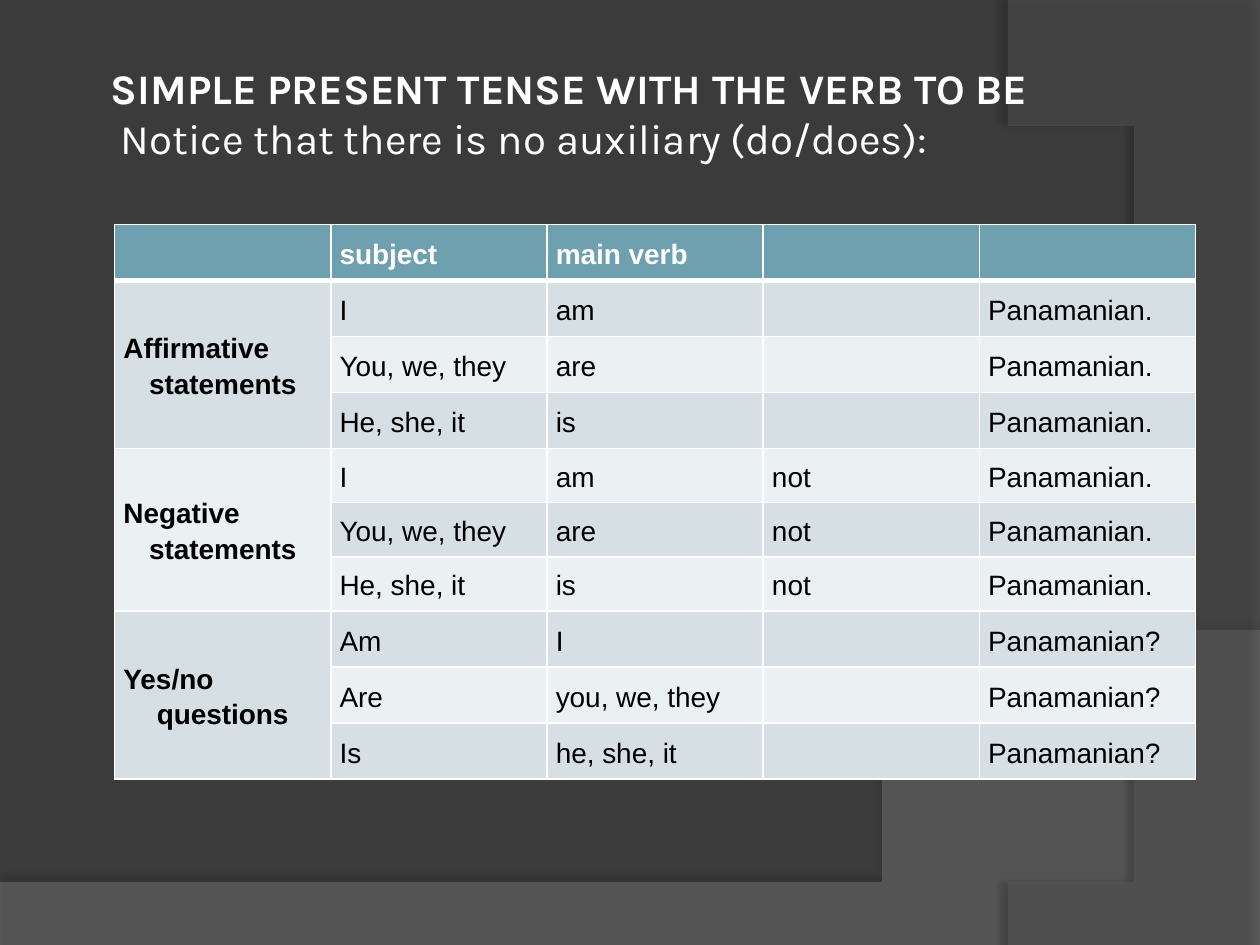
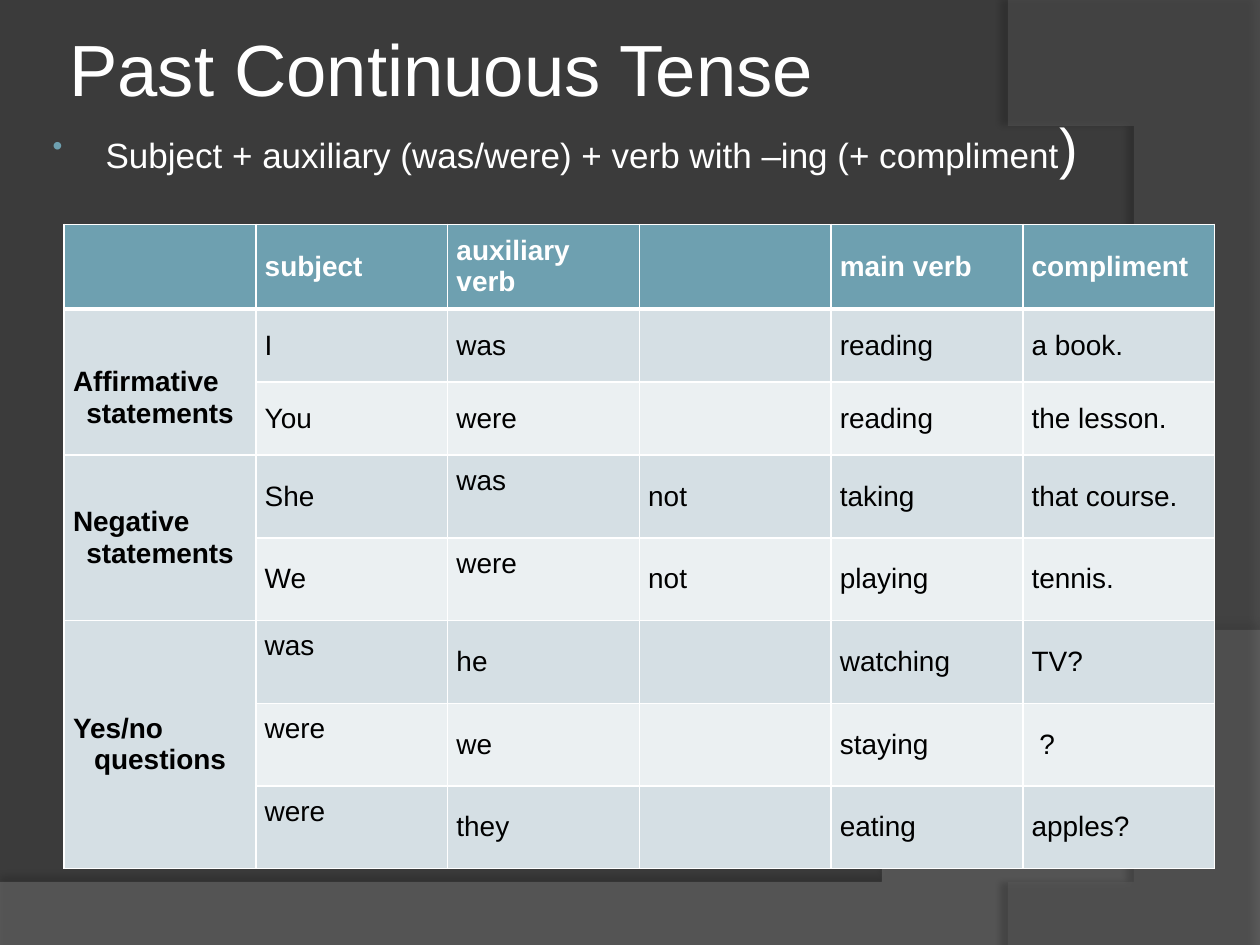
from dataclasses import dataclass
from typing import Any, NamedTuple

from lxml.etree import SubElement
from pptx import Presentation
from pptx.dml.color import RGBColor
from pptx.enum.text import MSO_ANCHOR, PP_ALIGN
from pptx.oxml.ns import qn
from pptx.util import Inches, Pt


# Theme: colours, fonts and type sizes shared by the slides
@dataclass(frozen=True)
class Theme:
    background: str = "3B3B3B"
    wave: str = "7F7F7F"
    arc: str = "5E5E5E"
    shadow: str = "000000"
    light_text: str = "FFFFFF"
    dark_text: str = "000000"
    accent: str = "6EA0B0"
    odd_row: str = "D5DFE4"
    even_row: str = "EBF0F2"
    border: str = "FFFFFF"
    body_font: str = "Arial"
    heading_font: str = "Karla"
    cell_size: float = 16
    formula_size: float = 20
    heading_size: float = 24
    bracket_size: float = 32
    title_size: float = 41.4


THEME = Theme()
Point = tuple[float, float]


class Band(NamedTuple):
    """A background outline: corners, then a Bezier curve back to the start."""
    corners: list[Point]
    curve: list[Point]
    color: str
    opacity: int
    shadow_opacity: int
    shadow_distance: float
    shadow_angle: int


class TextRun(NamedTuple):
    text: str
    size: float
    font: str = THEME.body_font
    color: str = THEME.light_text
    bold: bool = False


class Box(NamedTuple):
    left: float
    top: float
    width: float
    height: float

    def lengths(self) -> list[int]:
        return [Inches(value) for value in self]


class SentenceGroup(NamedTuple):
    label: str
    rows: list[list[str]]


@dataclass(frozen=True)
class TenseTable:
    box: Box
    header: list[str]
    groups: list[SentenceGroup]
    row_heights: list[float]
    line_spacing: float = 1.0
    raised: frozenset = frozenset()
    lowered: frozenset = frozenset()


BANDS = [
    Band([(0, 7.05), (0, 7.5), (10, 7.5), (10, 5.2)],
         [(10, 5.2), (5.59, 7.29), (3.91, 7.19), (0, 7.05)],
         THEME.wave, 45, 35, 3.5, 270),
    Band([(8, 0), (10, 0.02), (10, 7.5), (8.21, 7.5)],
         [(8.21, 7.5), (9.35, 6.19), (10.18, 3), (8, 0)],
         THEME.arc, 40, 45, 4, 180),
]

PRESENT_TABLE = TenseTable(
    box=Box(0.91, 1.78, 8.58, 4.3),
    header=["", "subject", "main verb", "", ""],
    groups=[
        SentenceGroup("Affirmative\nstatements", [
            ["I", "am", "", "Panamanian."],
            ["You, we, they", "are", "", "Panamanian."],
            ["He, she, it", "is", "", "Panamanian."]]),
        SentenceGroup("Negative\nstatements", [
            ["I", "am", "not", "Panamanian."],
            ["You, we, they", "are", "not", "Panamanian."],
            ["He, she, it", "is", "not", "Panamanian."]]),
        SentenceGroup("Yes/no\nquestions", [
            ["Am", "I", "", "Panamanian?"],
            ["Are", "you, we, they", "", "Panamanian?"],
            ["Is", "he, she, it", "", "Panamanian?"]]),
    ],
    row_heights=[0.43] * 10,
    line_spacing=1.15,
)

PAST_TABLE = TenseTable(
    box=Box(0.51, 1.78, 9.13, 5),
    header=["", "subject", "auxiliary verb", "", "main verb", "compliment"],
    groups=[
        SentenceGroup("Affirmative\nstatements", [
            ["I", "was", "", "reading", "a book."],
            ["You", "were", "", "reading", "the lesson."]]),
        SentenceGroup("Negative\nstatements", [
            ["She", "was", "not", "taking", "that course."],
            ["We", "were", "not", "playing", "tennis."]]),
        SentenceGroup("Yes/no\nquestions", [
            ["was", "he", "", "watching", "TV?"],
            ["were", "we", "", "staying", " ?"],
            ["were", "they", "", "eating", "apples?"]]),
    ],
    row_heights=[0.64] + [0.58] * 2 + [0.64] * 5,
    raised=frozenset({(3, 2), (4, 2), (5, 1), (6, 1), (7, 1)}),
    lowered=frozenset({(1, 0)}),
)


# Formatting helpers
def apply_format(target: Any, values: dict[str, Any]) -> None:
    for name, value in values.items():
        setattr(target, name, value)


def add_run(paragraph: Any, content: TextRun) -> None:
    run = paragraph.add_run()
    run.text = content.text
    apply_format(run.font, {"name": content.font, "size": Pt(content.size),
                            "bold": content.bold})
    run.font.color.rgb = RGBColor.from_string(content.color)


def add_color(parent: Any, color: str, opacity: int = 100) -> None:
    node = SubElement(parent, qn("a:srgbClr"), val=color)
    if opacity < 100:
        SubElement(node, qn("a:alpha"), val=str(opacity * 1000))


# Background bands
def curve_points(curve: list[Point], steps: int = 48) -> list[Point]:
    points = []
    for step in range(1, steps + 1):
        t = step / steps
        weights = ((1 - t) ** 3, 3 * t * (1 - t) ** 2, 3 * t ** 2 * (1 - t), t ** 3)
        points.append(tuple(sum(weight * point[axis] for weight, point in zip(weights, curve))
                            for axis in (0, 1)))
    return points


def draw_band(slide: Any, band: Band) -> None:
    start, *outline = band.corners + curve_points(band.curve)
    builder = slide.shapes.build_freeform(*start, scale=Inches(1))
    builder.add_line_segments(outline, close=True)
    shape = builder.convert_to_shape()
    shape.line.fill.background()
    shape.fill.solid()
    shape.fill.fore_color.rgb = RGBColor.from_string(band.color)
    properties = shape.fill._xPr
    color_node = properties.find(qn("a:solidFill")).find(qn("a:srgbClr"))
    SubElement(color_node, qn("a:alpha"), val=str(band.opacity * 1000))
    shape.shadow.inherit = False
    shadow = SubElement(properties.find(qn("a:effectLst")), qn("a:outerShdw"),
                        blurRad=str(Pt(4)), dist=str(Pt(band.shadow_distance)),
                        dir=str(band.shadow_angle * 60000), rotWithShape="0")
    add_color(shadow, THEME.shadow, band.shadow_opacity)


# Text boxes
def draw_text(slide: Any, box: Box, paragraphs: list[list[TextRun]],
              anchor: MSO_ANCHOR = MSO_ANCHOR.TOP, side_inset: float = 0.05) -> Any:
    frame = slide.shapes.add_textbox(*box.lengths()).text_frame
    apply_format(frame, {
        "word_wrap": True, "vertical_anchor": anchor,
        "margin_left": Inches(side_inset), "margin_right": Inches(side_inset),
        "margin_top": Inches(0.05), "margin_bottom": Inches(0.05)})
    for index, runs in enumerate(paragraphs):
        paragraph = frame.add_paragraph() if index else frame.paragraphs[0]
        for content in runs:
            add_run(paragraph, content)
    return frame


def add_bullet(paragraph: Any) -> None:
    paragraph.space_before = Pt(4)
    properties = paragraph._p.get_or_add_pPr()
    properties.set("marL", str(Inches(0.46)))
    properties.set("indent", str(Inches(-0.42)))
    add_color(SubElement(properties, qn("a:buClr")), THEME.accent)
    SubElement(properties, qn("a:buSzPct"), val="80000")
    SubElement(properties, qn("a:buFont"), typeface=THEME.body_font)
    SubElement(properties, qn("a:buChar"), char="•")


# Tense tables
def set_borders(cell: Any, row: int) -> None:
    properties = cell._tc.get_or_add_tcPr()
    thick_side = {0: "lnB", 1: "lnT"}.get(row)
    for side in ("lnL", "lnR", "lnT", "lnB"):
        width = Pt(3 if side == thick_side else 1)
        line = SubElement(properties, qn(f"a:{side}"), w=str(width))
        add_color(SubElement(line, qn("a:solidFill")), THEME.border)


def fill_cell(cell: Any, text: str, row: int, column: int, table: TenseTable) -> None:
    extra_line = 0.25
    position = (row, column)
    apply_format(cell, {
        "vertical_anchor": MSO_ANCHOR.MIDDLE,
        "margin_left": Inches(0.07), "margin_right": Inches(0.07),
        "margin_top": Inches(0.07 + extra_line * (position in table.lowered)),
        "margin_bottom": Inches(0.07 + extra_line * (position in table.raised))})
    if not cell.is_spanned:
        set_borders(cell, row)
    row_color = THEME.odd_row if row % 2 else THEME.even_row
    cell.fill.solid()
    cell.fill.fore_color.rgb = RGBColor.from_string(row_color if row else THEME.accent)
    if not text:
        return
    for index, line in enumerate(text.split("\n")):
        paragraph = cell.text_frame.add_paragraph() if index else cell.text_frame.paragraphs[0]
        apply_format(paragraph, {"line_spacing": table.line_spacing,
                                 "alignment": PP_ALIGN.CENTER if index else PP_ALIGN.LEFT})
        add_run(paragraph, TextRun(line, THEME.cell_size,
                                   color=THEME.dark_text if row else THEME.light_text,
                                   bold=row == 0 or column == 0))


def draw_table(slide: Any, table: TenseTable) -> None:
    rows = [table.header]
    spans = []
    for group in table.groups:
        spans.append((len(rows), len(rows) + len(group.rows) - 1))
        for index, words in enumerate(group.rows):
            rows.append(["" if index else group.label, *words])
    grid = slide.shapes.add_table(len(rows), len(table.header), *table.box.lengths()).table
    for first, last in spans:
        grid.cell(first, 0).merge(grid.cell(last, 0))
    for row, (words, height) in enumerate(zip(rows, table.row_heights)):
        grid.rows[row].height = Inches(height)
        for column, text in enumerate(words):
            fill_cell(grid.cell(row, column), text, row, column, table)


# Slides
def add_slide(presentation: Any) -> Any:
    slide = presentation.slides.add_slide(presentation.slide_layouts[6])
    for band in BANDS:
        draw_band(slide, band)
    return slide


def add_present_slide(presentation: Any) -> None:
    slide = add_slide(presentation)
    draw_table(slide, PRESENT_TABLE)
    draw_text(slide, Box(0.83, 0.44, 8.17, 0.91), [
        [TextRun("SIMPLE PRESENT TENSE WITH THE VERB TO BE",
                 THEME.heading_size, THEME.heading_font, bold=True)],
        [TextRun(" Notice that there is no auxiliary (do/does):",
                 THEME.heading_size, THEME.heading_font)],
    ], MSO_ANCHOR.MIDDLE)


def add_past_slide(presentation: Any) -> None:
    slide = add_slide(presentation)
    draw_text(slide, Box(0.5, 0.14, 9, 0.76),
              [[TextRun("Past Continuous Tense", THEME.title_size)]])
    formula = draw_text(slide, Box(0.28, 0.84, 9.24, 5.67), [[
        TextRun("Subject + auxiliary (was/were) + verb with –ing (+ compliment",
                THEME.formula_size),
        TextRun(")", THEME.bracket_size),
    ]], side_inset=0.1)
    add_bullet(formula.paragraphs[0])
    draw_table(slide, PAST_TABLE)


def main() -> None:
    presentation = Presentation()
    apply_format(presentation, {"slide_width": Inches(10), "slide_height": Inches(7.5)})
    background = presentation.slide_master.background.fill
    background.solid()
    background.fore_color.rgb = RGBColor.from_string(THEME.background)
    add_present_slide(presentation)
    add_past_slide(presentation)
    presentation.save("out.pptx")


if __name__ == "__main__":
    main()
